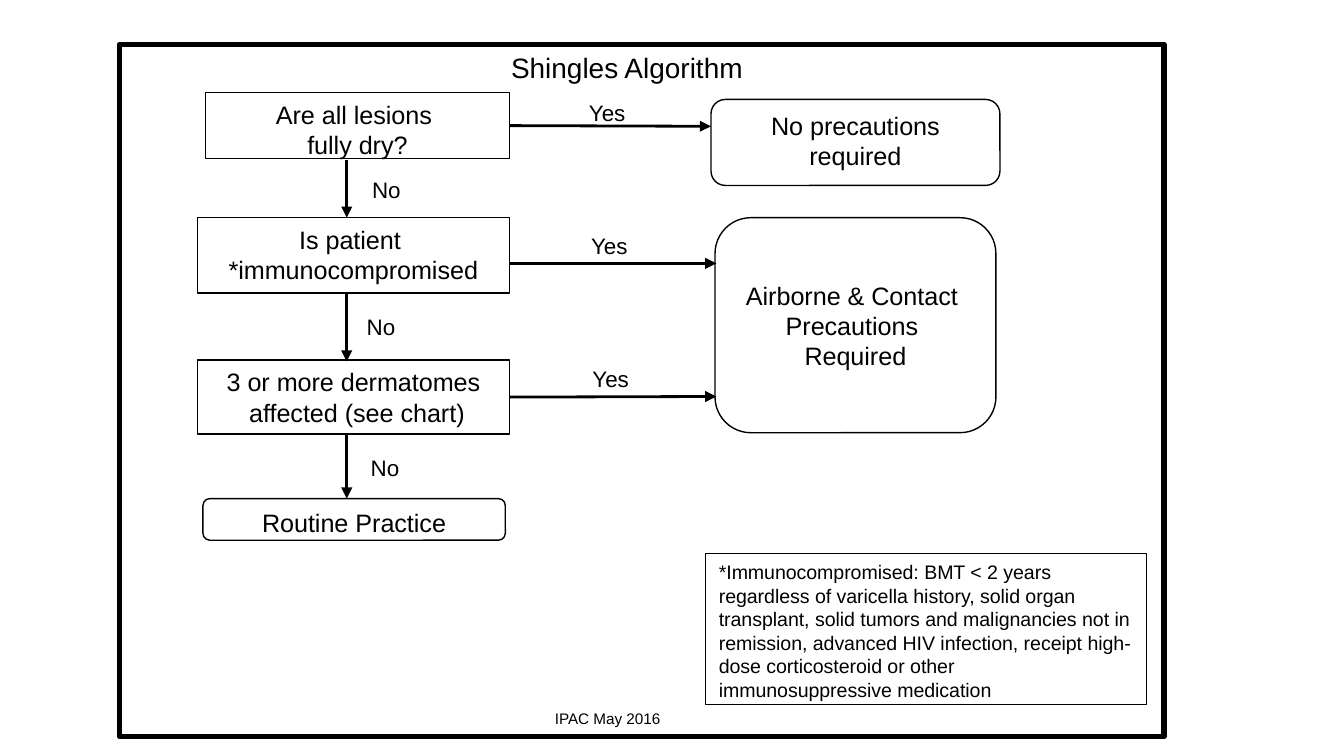
from dataclasses import dataclass
from typing import Optional

from lxml import etree
from pptx import Presentation
from pptx.dml.color import RGBColor
from pptx.enum.shapes import MSO_CONNECTOR, MSO_SHAPE
from pptx.enum.text import MSO_ANCHOR, MSO_AUTO_SIZE, PP_ALIGN
from pptx.oxml.ns import qn
from pptx.util import Inches, Pt

BLACK = RGBColor(0x00, 0x00, 0x00)
WHITE = RGBColor(0xFF, 0xFF, 0xFF)
FONT = "Arial"
RECT = MSO_SHAPE.RECTANGLE
ROUNDED = MSO_SHAPE.ROUNDED_RECTANGLE
TERMINATOR = MSO_SHAPE.FLOWCHART_TERMINATOR
STRAIGHT = MSO_CONNECTOR.STRAIGHT
LEFT, CENTER = PP_ALIGN.LEFT, PP_ALIGN.CENTER
TOP, MIDDLE = MSO_ANCHOR.TOP, MSO_ANCHOR.MIDDLE
GROW = MSO_AUTO_SIZE.SHAPE_TO_FIT_TEXT
RIGHT_SIDE = 3
SLIDE_WIDTH = Inches(10)
SLIDE_HEIGHT = SLIDE_WIDTH * 9 // 16
DOWN_X = 2.58


@dataclass(frozen=True)
class Box:
    key: str
    x: float
    y: float
    w: float
    h: float
    lines: tuple[str, ...] = ()
    kind: MSO_SHAPE = RECT
    size: float = 13.5
    align: PP_ALIGN = CENTER
    anchor: MSO_ANCHOR = TOP
    fill: Optional[RGBColor] = WHITE
    border: float = 0.75


@dataclass(frozen=True)
class Arrow:
    x1: float
    y1: float
    x2: float
    y2: float
    source: Optional[str] = None


@dataclass(frozen=True)
class Label:
    text: str
    x: float
    y: float
    w: float
    h: float = 0.3
    size: float = 12


BOXES = (
    Box("title", 3.07, 0.27, 3.19, 0.38, ("Shingles Algorithm",), TERMINATOR,
        size=15, fill=None, border=0),
    Box("lesions", 1.53, 0.69, 2.26, 0.49, ("Are all lesions ", "fully dry?")),
    Box("no precautions", 5.29, 0.74, 2.15, 0.64,
        ("No precautions", "required"), ROUNDED),
    Box("immunity", 1.47, 1.62, 2.32, 0.56,
        ("Is patient ", "*immunocompromised")),
    Box("dry yes", 4.24, 0.69, 0.59, 0.21, (" Yes",), size=12, align=LEFT,
        border=0),
    Box("airborne", 5.32, 1.62, 2.09, 1.6,
        ("Airborne & Contact ", "Precautions ", "Required"), ROUNDED,
        anchor=MIDDLE),
    Box("routine", 1.51, 3.71, 2.25, 0.31, ("Routine Practice",), ROUNDED),
    Box("dermatomes", 1.47, 2.68, 2.32, 0.55,
        ("3 or more dermatomes", " affected (see chart)")),
    Box("definition", 5.25, 4.12, 3.28, 1.12,
        ("*Immunocompromised: BMT < 2 years regardless of varicella history, "
         "solid organ transplant, solid tumors and malignancies not in "
         "remission, advanced HIV infection, receipt high-dose corticosteroid "
         "or other immunosuppressive medication",), size=10.5, align=LEFT),
)
FRAME = Box("frame", 0.89, 0.33, 7.77, 5.15, fill=None, border=3)

ARROWS = (
    Arrow(3.79, 1.96, 5.33, 1.96),
    Arrow(3.79, 0.94, 5.29, 0.94, "lesions"),
    Arrow(DOWN_X, 2.19, DOWN_X, 2.69),
    Arrow(DOWN_X, 1.19, DOWN_X, 1.62),
    Arrow(3.77, 2.95, 5.33, 2.95, "dermatomes"),
    Arrow(DOWN_X, 3.23, DOWN_X, 3.71),
)

LABELS = (
    Label("No", 2.66, 3.33, 0.41),
    Label("No", 2.63, 2.28, 0.42),
    Label("No", 2.67, 1.26, 0.41),
    Label("Yes", 4.3, 1.68, 0.48),
    Label("Yes", 4.31, 2.67, 0.48),
)
FOOTER = Label("IPAC May 2016", 4.03, 5.23, 1.01, 0.24, 8.2)


def write_lines(frame, lines: tuple[str, ...], size: float, align: PP_ALIGN) -> None:
    for index, line in enumerate(lines):
        paragraph = frame.paragraphs[0] if index == 0 else frame.add_paragraph()
        paragraph.alignment = align
        run = paragraph.add_run()
        run.text = line
        run.font.color.rgb = BLACK
        for name, value in {"name": FONT, "size": Pt(size)}.items():
            setattr(run.font, name, value)


def draw_box(slide, box: Box):
    shape = slide.shapes.add_shape(
        box.kind, Inches(box.x), Inches(box.y), Inches(box.w), Inches(box.h))
    shape.shadow.inherit = False
    if box.fill is None:
        shape.fill.background()
    else:
        shape.fill.solid()
        shape.fill.fore_color.rgb = box.fill
    if box.border:
        shape.line.color.rgb = BLACK
        shape.line.width = Pt(box.border)
    else:
        shape.line.fill.background()
    for name, value in {"word_wrap": True, "vertical_anchor": box.anchor}.items():
        setattr(shape.text_frame, name, value)
    write_lines(shape.text_frame, box.lines, box.size, box.align)
    return shape


def draw_arrow(slide, arrow: Arrow, shapes: dict) -> None:
    connector = slide.shapes.add_connector(
        STRAIGHT, Inches(arrow.x1), Inches(arrow.y1),
        Inches(arrow.x2), Inches(arrow.y2))
    if arrow.source:
        connector.begin_connect(shapes[arrow.source], RIGHT_SIDE)
    connector.line.color.rgb = BLACK
    connector.line.width = Pt(1.5)
    line = connector.line._get_or_add_ln()
    etree.SubElement(line, qn("a:tailEnd"), type="triangle")
    etree.SubElement(line.getparent(), qn("a:effectLst"))


def draw_label(slide, label: Label) -> None:
    box = slide.shapes.add_textbox(
        Inches(label.x), Inches(label.y), Inches(label.w), Inches(label.h))
    box.text_frame.word_wrap = False
    box.text_frame.auto_size = GROW
    write_lines(box.text_frame, (label.text,), label.size, LEFT)


def main() -> None:
    deck = Presentation()
    deck.slide_width, deck.slide_height = SLIDE_WIDTH, SLIDE_HEIGHT
    slide = deck.slides.add_slide(deck.slide_layouts[6])
    shapes = {box.key: draw_box(slide, box) for box in BOXES}
    for arrow in ARROWS:
        draw_arrow(slide, arrow, shapes)
    for label in LABELS:
        draw_label(slide, label)
    draw_box(slide, FRAME)
    draw_label(slide, FOOTER)
    deck.save("out.pptx")


if __name__ == "__main__":
    main()
